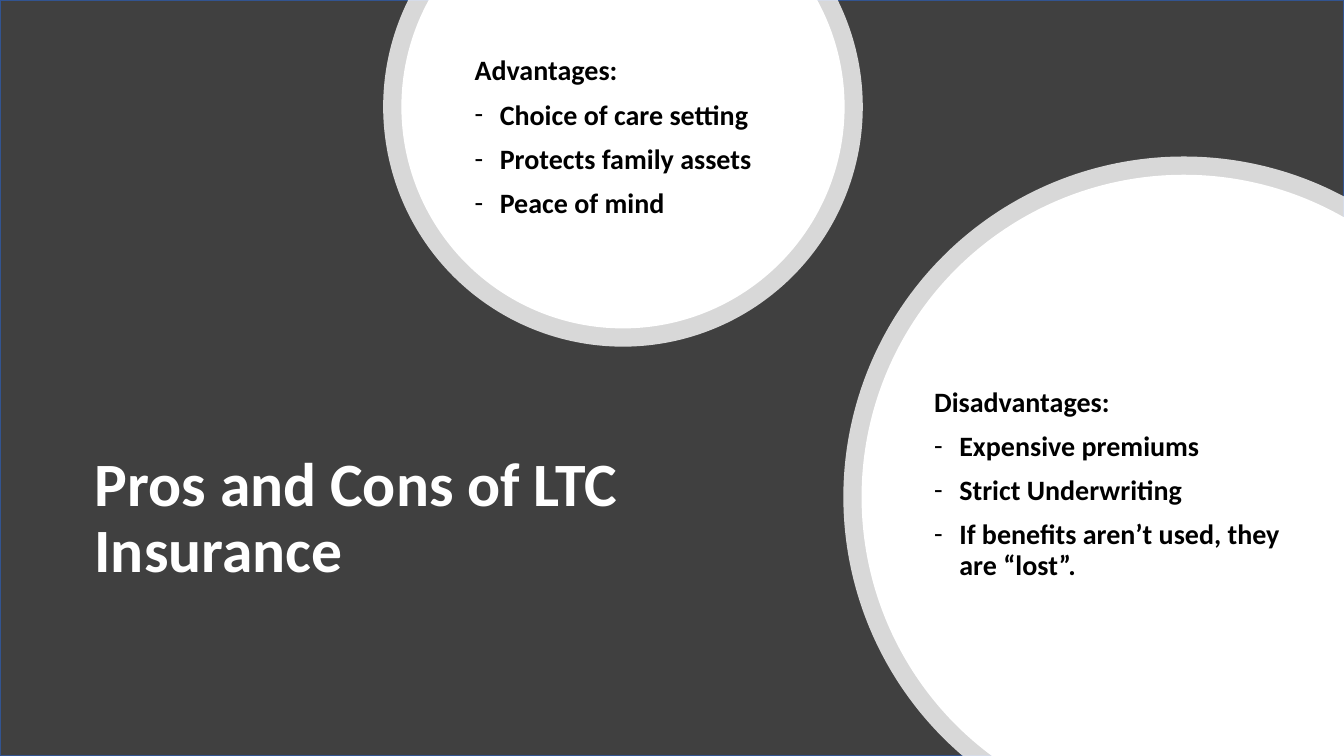
"""Build the slide on pros and cons of LTC insurance."""
from math import acos, asin, cos, degrees, radians, sin

from lxml import etree
from pptx import Presentation
from pptx.dml.color import RGBColor
from pptx.enum.shapes import MSO_SHAPE
from pptx.enum.text import MSO_ANCHOR
from pptx.oxml.ns import qn
from pptx.util import Pt

RECTANGLE = MSO_SHAPE.RECTANGLE
MIDDLE = MSO_ANCHOR.MIDDLE

WHITE = RGBColor(0xFF, 0xFF, 0xFF)
BLACK = RGBColor(0, 0, 0)
CHARCOAL = RGBColor(0x40, 0x40, 0x40)
BLUE = RGBColor(0x32, 0x54, 0x91)

WIDTH, HEIGHT = 960, 540
RING = 13
FONT = "Calibri"
TITLE = "Pros and Cons of LTC Insurance"
TITLE_BOX = (60.5, 275.8, 476.6, 190.8)
PANELS = [
    {
        "center": (445, 76.3), "radius": 171.3,
        "box": (331.9, 28.1, 226.8, 141.1), "bottom": 3.6,
        "heading": "Advantages:",
        "points": ["Choice of care setting", "Protects family assets", "Peace of mind"],
    },
    {
        "center": (845.6, 355), "radius": 243.2,
        "box": (660.2, 247.7, 273.6, 218.9), "bottom": 25.6,
        "heading": "Disadvantages:",
        "points": ["Expensive premiums", "Strict Underwriting",
                   "If benefits aren’t used, they are “lost”."],
    },
]


def visible_arc(center, radius):
    x, y = center
    if x + radius > WIDTH:
        start = 180 - degrees(asin((HEIGHT - y) / radius))
        end = 360 - degrees(acos((WIDTH - x) / radius))
        corners = [(Pt(WIDTH), Pt(HEIGHT))]
    else:
        start = degrees(asin(-y / radius))
        end = 180 - start
        corners = []
    quarters = [a for a in range(0, 360, 90) if start < a < end]
    return [start, *quarters, end], corners


def add_circle(s, center, radius, alpha=None):
    angles, corners = visible_arc(center, radius)
    stops = [(Pt(center[0] + radius * cos(radians(a))),
              Pt(center[1] + radius * sin(radians(a)))) for a in angles]
    builder = s.shapes.build_freeform(*stops[0], scale=1.0)
    builder.add_line_segments(stops[1:] + corners, close=True)
    sp = builder.convert_to_shape()
    lines = list(sp._element.iter(qn("a:lnTo")))
    for line, a, b in zip(lines, angles, angles[1:]):
        arc = etree.Element(qn("a:arcTo"))
        for key, value in (("wR", Pt(radius)), ("hR", Pt(radius)),
                           ("stAng", round(a % 360 * 60000)),
                           ("swAng", round((b - a) * 60000))):
            arc.set(key, str(int(value)))
        line.getparent().replace(line, arc)
    sp.shadow.inherit = False
    sp.fill.solid()
    sp.fill.fore_color.rgb = WHITE
    sp.line.fill.background()
    if alpha:
        color = sp._element.spPr.find(qn("a:solidFill")).find(qn("a:srgbClr"))
        etree.SubElement(color, qn("a:alpha")).set("val", str(alpha * 1000))


def add_text(s, box, lines, size, color, before=0, bottom=3.6):
    tf = s.shapes.add_textbox(*map(Pt, box)).text_frame
    tf.word_wrap = True
    tf.vertical_anchor = MIDDLE
    tf.margin_bottom = Pt(bottom)
    tf.text = "\n".join(lines)
    for p in tf.paragraphs:
        p.line_spacing = 0.9
        p.space_before = Pt(before)
        font = p.runs[0].font
        font.name, font.size, font.bold = FONT, Pt(size), True
        font.color.rgb = color
    return tf


def add_dash(p):
    pPr = p._p.get_or_add_pPr()
    pPr.set("marL", str(int(Pt(18))))
    pPr.set("indent", str(int(Pt(-18))))
    etree.SubElement(pPr, qn("a:buFont")).set("typeface", FONT)
    etree.SubElement(pPr, qn("a:buChar")).set("char", "-")


def main():
    prs = Presentation()
    prs.slide_width, prs.slide_height = Pt(WIDTH), Pt(HEIGHT)
    s = prs.slides.add_slide(prs.slide_layouts[6])

    sp = s.shapes.add_shape(RECTANGLE, 0, 0, Pt(WIDTH), Pt(HEIGHT))
    sp.shadow.inherit = False
    sp.fill.solid()
    sp.fill.fore_color.rgb = CHARCOAL
    sp.line.color.rgb = BLUE
    sp.line.width = Pt(1)

    add_text(s, TITLE_BOX, [TITLE], 44, WHITE)
    for panel in PANELS:
        add_circle(s, panel["center"], panel["radius"], alpha=80)
        add_circle(s, panel["center"], panel["radius"] - RING)
        lines = [panel["heading"], *panel["points"]]
        tf = add_text(s, panel["box"], lines, 20, BLACK, 10, panel["bottom"])
        for p in tf.paragraphs[1:]:
            add_dash(p)
    prs.save("out.pptx")


if __name__ == "__main__":
    main()
